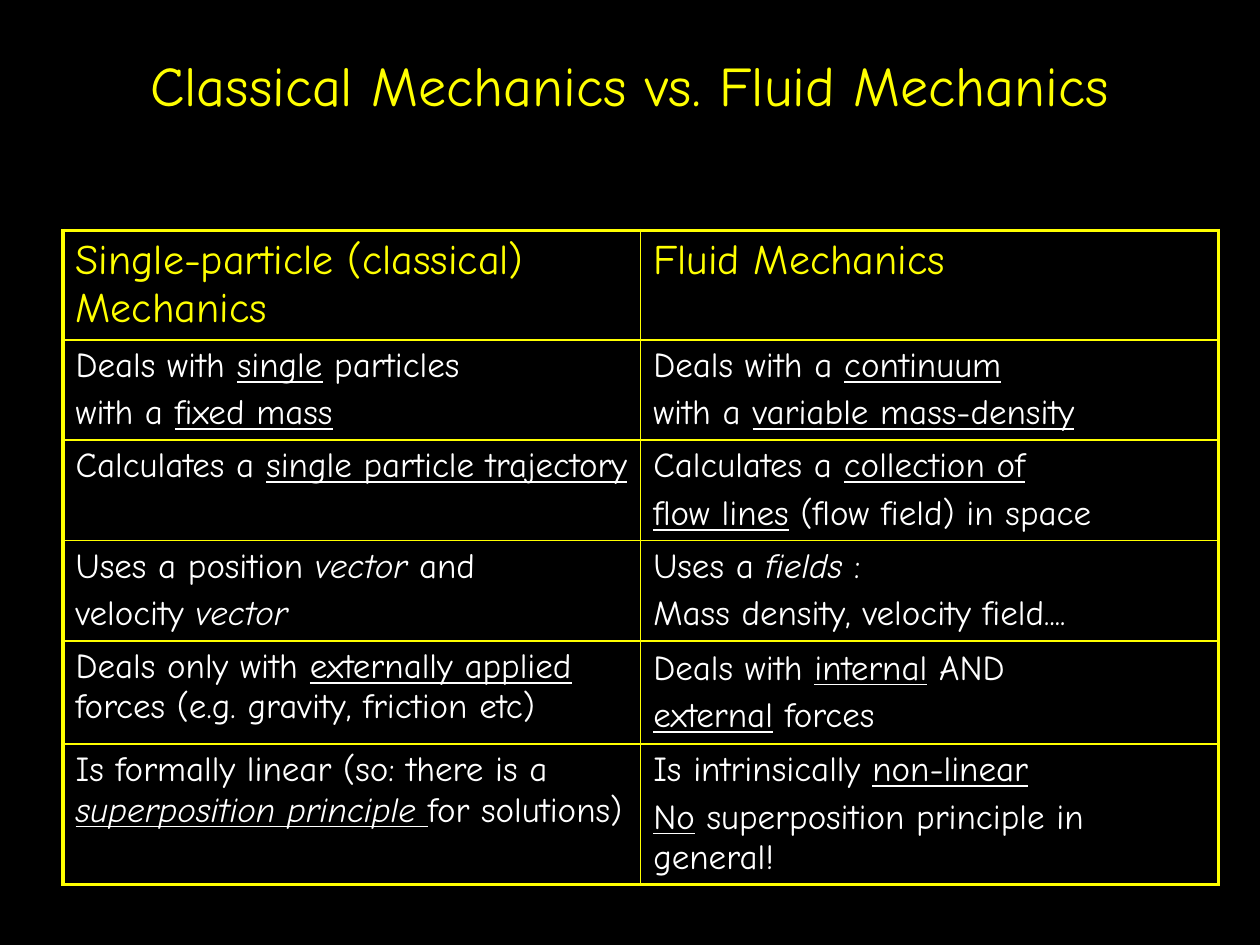
from typing import NamedTuple

import pptx
import pptx.dml.color
import pptx.enum.text
import pptx.oxml
import pptx.oxml.ns
import pptx.util

Inches, Pt = pptx.util.Inches, pptx.util.Pt
ANCHOR = pptx.enum.text.MSO_ANCHOR
COLOR = {"back": "000000", "accent": "FFFF00", "body": "FFFFFF"}
FONT = "Comic Neue"
THICK, THIN = 2.25, 1


class Run(NamedTuple):
    text: str
    under: bool = False
    slant: bool = False


class Cell(NamedTuple):
    lines: list[list[Run]]
    anchor: ANCHOR = ANCHOR.TOP


class Row(NamedTuple):
    height: float
    left: Cell
    right: Cell


def under(text: str) -> Run:
    return Run(text, under=True)


def slant(text: str) -> Run:
    return Run(text, slant=True)


ROWS = [
    Row(0.69,
        Cell([[Run("Single-particle (classical) Mechanics")]]),
        Cell([[Run("Fluid Mechanics")]])),
    Row(0.74,
        Cell([[Run("Deals with "), under("single"), Run(" particles")],
              [Run("with a "), under("fixed mass")]]),
        Cell([[Run("Deals with a "), under("continuum")],
              [Run("with a "), under("variable mass-density")]])),
    Row(0.74,
        Cell([[Run("Calculates a "), under("single particle trajectory")]]),
        Cell([[Run("Calculates a "), under("collection of")],
              [under("flow lines"), Run(" (flow field) in space")]])),
    Row(0.74,
        Cell([[Run("Uses a position "), slant("vector"), Run(" and")],
              [Run("velocity "), slant("vector")]]),
        Cell([[Run("Uses a "), slant("fields"), Run(" :")],
              [Run("Mass density, velocity field....")]])),
    Row(0.82,
        Cell([[Run("Deals only with "), under("externally applied"),
               Run(" forces (e.g. gravity, friction etc)")]]),
        Cell([[Run("Deals with "), under("internal"), Run(" AND")],
              [under("external"), Run(" forces")]], ANCHOR.MIDDLE)),
    Row(0.69,
        Cell([[Run("Is formally linear (so: there is a "),
               Run("superposition principle ", True, True),
               Run("for solutions)")]]),
        Cell([[Run("Is intrinsically "), under("non-linear")],
              [under("No"), Run(" superposition principle in general!")]])),
]


def rgb(name: str) -> pptx.dml.color.RGBColor:
    return pptx.dml.color.RGBColor.from_string(COLOR[name])


def style(para, size: float, color: str) -> None:
    para.font.name = FONT
    para.font.size = Pt(size)
    para.font.color.rgb = rgb(color)


def border(cell, widths: dict[str, float]) -> None:
    """Draw the sides L, R, T and B in the given point widths."""
    props = cell._tc.get_or_add_tcPr()
    for side, width in widths.items():
        props.append(pptx.oxml.parse_xml(
            f'<a:ln{side} {pptx.oxml.ns.nsdecls("a")} w="{Pt(width)}">'
            f'<a:solidFill><a:srgbClr val="{COLOR["accent"]}"/></a:solidFill>'
            f'</a:ln{side}>'))


def write(cell, data: Cell, size: float, color: str) -> None:
    cell.vertical_anchor = data.anchor
    frame = cell.text_frame
    for num, line in enumerate(data.lines):
        para = frame.add_paragraph() if num else frame.paragraphs[0]
        style(para, size, color)
        if num:
            para.space_before = Pt(size * 0.2)
        for part in line:
            run = para.add_run()
            run.text = part.text
            # Runs carry the full face, as table text ignores paragraph defaults
            style(run, size, color)
            run.font.underline = part.under
            run.font.italic = part.slant


def add_title(slide, text: str) -> None:
    title = slide.shapes.title
    title.left, title.top = Inches(0.75), Inches(0.33)
    title.width, title.height = Inches(8.5), Inches(0.67)
    title.text_frame.text = text
    title.text_frame.vertical_anchor = ANCHOR.MIDDLE
    para = title.text_frame.paragraphs[0]
    para.alignment = pptx.enum.text.PP_ALIGN.CENTER
    style(para, 32, "accent")


def add_grid(slide, rows: list[Row]) -> None:
    table = slide.shapes.add_table(
        len(rows), 2, Inches(0.5), Inches(1.83), Inches(9.17),
        Inches(sum(row.height for row in rows))).table
    table.first_row = table.horz_banding = False
    last = len(rows) - 1
    for r, row in enumerate(rows):
        table.rows[r].height = Inches(row.height)
        size, color = (20, "body") if r else (24, "accent")
        for c, data in enumerate((row.left, row.right)):
            cell = table.cell(r, c)
            write(cell, data, size, color)
            border(cell, {"L": THIN if c else THICK,
                          "R": THICK if c else THIN,
                          "T": THIN if r else THICK,
                          "B": THICK if r == last else THIN})
            cell.fill.background()


def main() -> None:
    deck = pptx.Presentation()
    deck.slide_width, deck.slide_height = Inches(10), Inches(7.5)
    slide = deck.slides.add_slide(deck.slide_layouts[5])
    slide.background.fill.solid()
    slide.background.fill.fore_color.rgb = rgb("back")
    add_title(slide, "Classical Mechanics vs. Fluid Mechanics")
    add_grid(slide, ROWS)
    deck.save("out.pptx")


if __name__ == "__main__":
    main()
